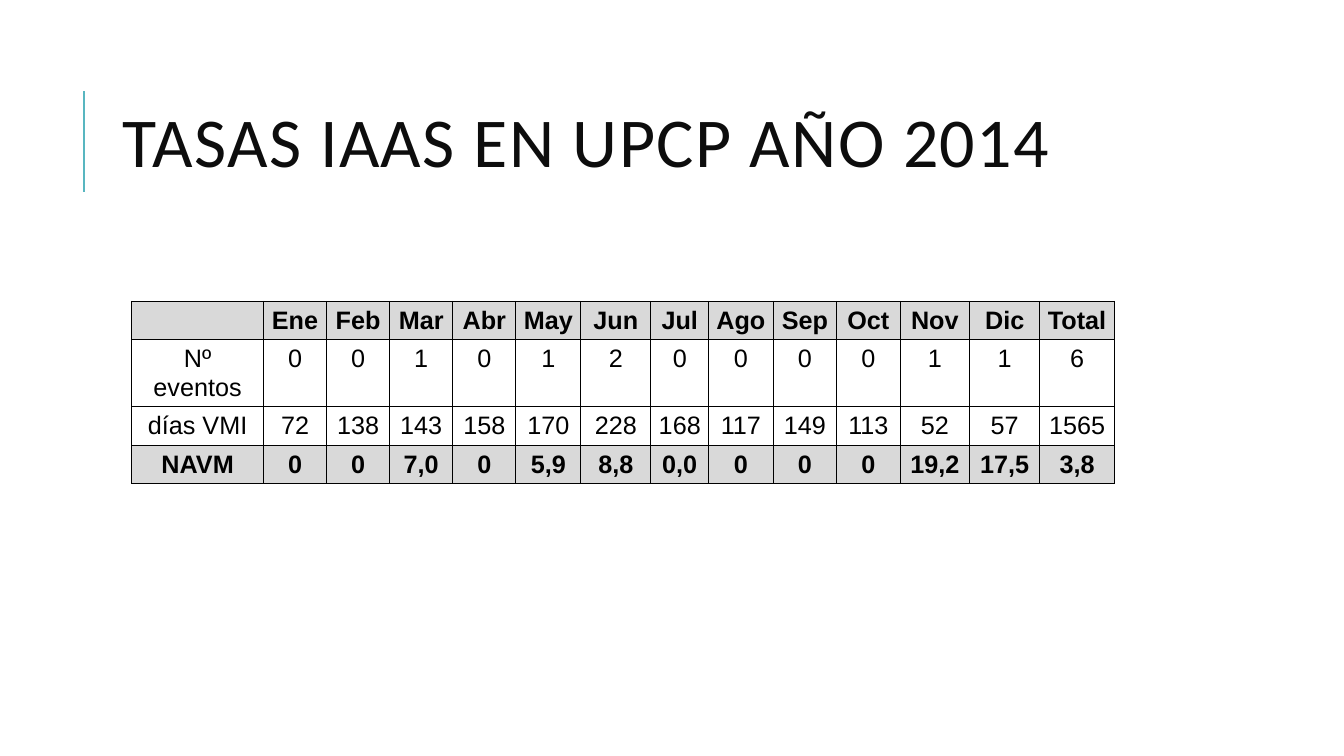
from lxml.etree import SubElement
from pptx import Presentation
from pptx.dml.color import RGBColor
from pptx.enum.shapes import MSO_CONNECTOR as Connector
from pptx.enum.text import MSO_ANCHOR as Anchor, MSO_AUTO_SIZE as AutoSize, PP_ALIGN as Align
from pptx.oxml import parse_xml
from pptx.oxml.ns import nsdecls, qn
from pptx.util import Cm, Pt

TITLE = "TASAS IAAS EN UPCP AÑO 2014"
ROWS = [
    ["", "Ene", "Feb", "Mar", "Abr", "May", "Jun", "Jul", "Ago", "Sep", "Oct", "Nov", "Dic", "Total"],
    ["Nº eventos", "0", "0", "1", "0", "1", "2", "0", "0", "0", "0", "1", "1", "6"],
    ["días VMI", "72", "138", "143", "158", "170", "228", "168", "117", "149", "113", "52", "57", "1565"],
    ["NAVM", "0", "0", "7,0", "0", "5,9", "8,8", "0,0", "0", "0", "0", "19,2", "17,5", "3,8"],
]
COLUMN_WIDTHS = [3.32, 1.59, 1.59, 1.59, 1.59, 1.64, 1.76, 1.46, 1.62, 1.61, 1.59, 1.76, 1.76, 1.89]
ROW_HEIGHTS = [0.97, 1.67, 0.97, 0.97]
SHADED_ROWS = (0, 3)

BLACK = RGBColor(0x00, 0x00, 0x00)
INK = RGBColor(0x0D, 0x0D, 0x0D)
TEAL = RGBColor(0x58, 0xB6, 0xC0)
GREY = RGBColor(0xD9, 0xD9, 0xD9)
WHITE = RGBColor(0xFF, 0xFF, 0xFF)


def add_title(slide):
    """Place the title and the accent line to its left."""
    line = slide.shapes.add_connector(Connector.STRAIGHT, Cm(2.12), Cm(4.83), Cm(2.12), Cm(2.29))
    line.line.color.rgb = TEAL
    line.line.width = Pt(1.5)
    SubElement(line._element.spPr, qn("a:effectLst"))

    title = slide.shapes.title
    title.left, title.top, title.width, title.height = Cm(2.84), Cm(1.63), Cm(27), Cm(4.17)
    frame = title.text_frame
    frame.text = TITLE
    frame.word_wrap = True
    frame.auto_size = AutoSize.NONE
    frame.vertical_anchor = Anchor.MIDDLE
    paragraph = frame.paragraphs[0]
    paragraph.alignment = Align.LEFT
    paragraph.line_spacing = 0.8
    paragraph.font.name = "Calibri"
    paragraph.font.size = Pt(50)
    paragraph.font.color.rgb = INK
    paragraph.runs[0].font._element.set("spc", "100")


def add_borders(cell):
    """Draw a thin black line on the four sides of a cell."""
    properties = cell._tc.get_or_add_tcPr()
    for position, side in enumerate(("lnL", "lnR", "lnT", "lnB")):
        properties.insert(position, parse_xml(
            f'<a:{side} {nsdecls("a")} w="{Pt(0.75)}"><a:solidFill>'
            f'<a:srgbClr val="{BLACK}"/></a:solidFill></a:{side}>'))


def format_cell(cell, text, shaded, label):
    """Write one cell and set its fill, margins, font and borders."""
    cell.text = text
    cell.margin_left = cell.margin_right = cell.margin_top = cell.margin_bottom = Cm(0.13)
    if shaded or label:
        cell.fill.solid()
        cell.fill.fore_color.rgb = GREY if shaded else WHITE
    else:
        cell.fill.background()
    paragraph = cell.text_frame.paragraphs[0]
    paragraph.alignment = Align.CENTER
    paragraph.font.name = "Arial"
    paragraph.font.size = Pt(18)
    paragraph.font.bold = shaded
    paragraph.font.color.rgb = BLACK
    add_borders(cell)


def add_rates_table(slide):
    """Build the monthly table of rates."""
    table = slide.shapes.add_table(
        len(ROWS), len(COLUMN_WIDTHS), Cm(3.32), Cm(7.59),
        Cm(sum(COLUMN_WIDTHS)), Cm(sum(ROW_HEIGHTS))).table
    table.first_row = table.horz_banding = False
    for column, width in zip(table.columns, COLUMN_WIDTHS):
        column.width = Cm(width)
    for row_index, (row, height, texts) in enumerate(zip(table.rows, ROW_HEIGHTS, ROWS)):
        row.height = Cm(height)
        for column_index, (cell, text) in enumerate(zip(row.cells, texts)):
            format_cell(cell, text, row_index in SHADED_ROWS, column_index == 0)


def main():
    """Create the slide and save it."""
    presentation = Presentation()
    presentation.slide_width, presentation.slide_height = Cm(33.87), Cm(19.05)
    slide = presentation.slides.add_slide(presentation.slide_layouts[5])
    add_title(slide)
    add_rates_table(slide)
    presentation.save("out.pptx")


if __name__ == "__main__":
    main()
